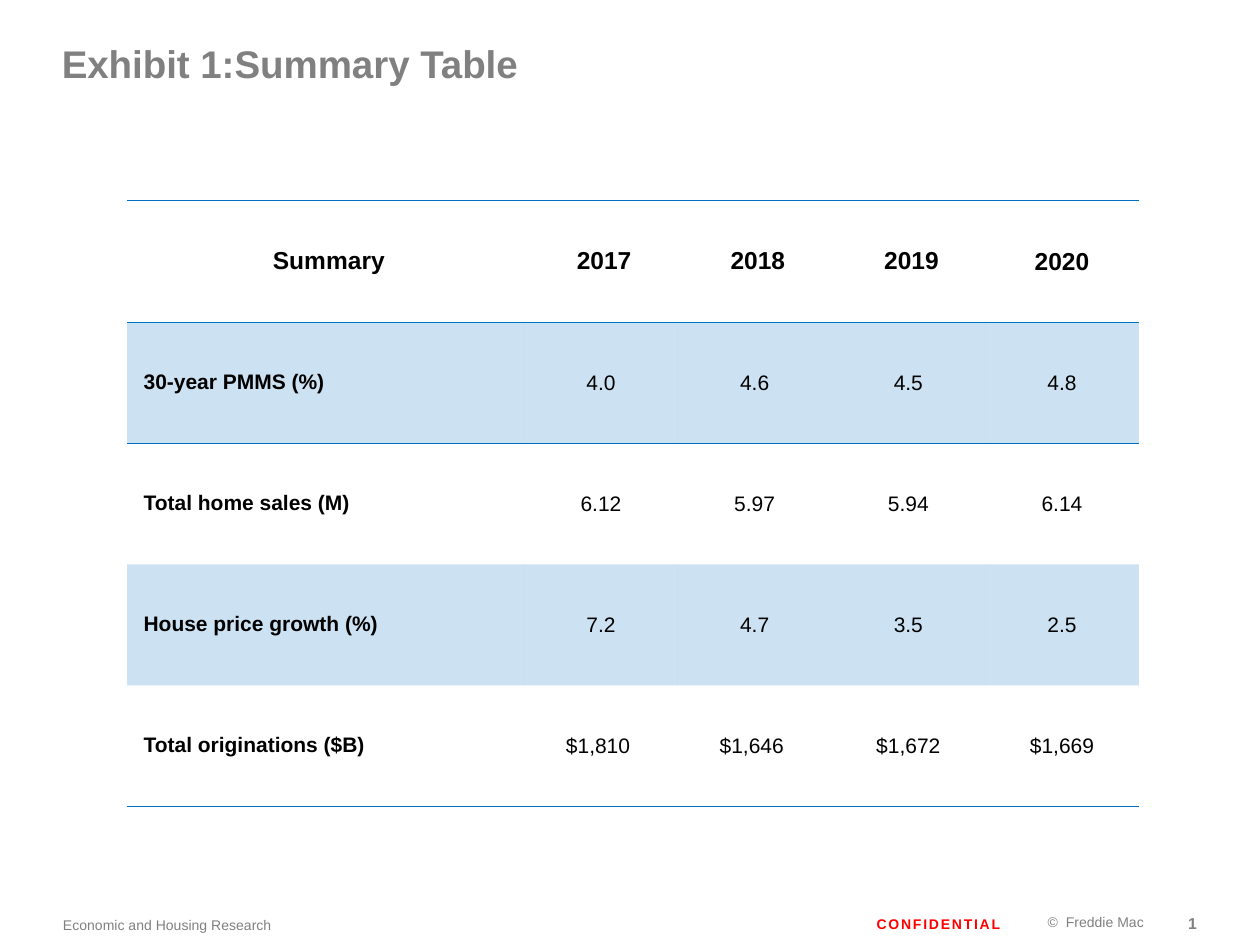
from dataclasses import dataclass

from lxml import etree
from pptx import Presentation
from pptx import util as u
from pptx.dml.color import RGBColor
from pptx.enum import text
from pptx.oxml import ns

GRAY = RGBColor(0x80, 0x80, 0x80)
RED = RGBColor(0xFF, 0x00, 0x00)
BLACK = RGBColor(0x00, 0x00, 0x00)
BLUE = RGBColor(0x00, 0x70, 0xC0)
FONT = "Arial"
PLAIN_TABLE_STYLE = "{2D5ABB26-0587-4C30-8999-92F81FD0307C}"
LEFT, CENTER, RIGHT = text.PP_ALIGN.LEFT, text.PP_ALIGN.CENTER, text.PP_ALIGN.RIGHT


@dataclass
class Style:
    size: float
    color: RGBColor
    bold: bool = False
    spacing: float = 0


@dataclass
class FooterItem:
    words: str
    left: float
    top: float
    width: float
    height: float
    align: text.PP_ALIGN
    style: Style


FOOTER = [
    FooterItem("©  Freddie Mac", 7.56, 7.16, 1.52, 0.32, RIGHT, Style(8, GRAY)),
    FooterItem("CONFIDENTIAL", 4.74, 7.18, 3.2, 0.31, RIGHT, Style(8, RED, True, 1)),
    FooterItem("Economic and Housing Research", 0.5, 7.18, 4.47, 0.32, LEFT, Style(8, GRAY)),
    FooterItem("1", 9.17, 7.17, 0.33, 0.31, RIGHT, Style(9, GRAY, True)),
]

ROWS = [
    ["Summary", "2017", "2018", "2019", "2020"],
    ["30-year PMMS (%)", "4.0", "4.6", "4.5", "4.8"],
    ["Total home sales (M)", "6.12", "5.97", "5.94", "6.14"],
    ["House price growth (%)", "7.2", "4.7", "3.5", "2.5"],
    ["Total originations ($B)", "$1,810 ", "$1,646 ", "$1,672", "$1,669"],
]
COLUMN_WIDTHS = [3.15] + [1.22] * 4
ROW_HEIGHTS = [0.97] + [0.96] * 4


def add_span(para, words: str, style: Style) -> None:
    span = para.add_run()
    span.text = words
    span.font.name = FONT
    span.font.size = u.Pt(style.size)
    span.font.bold = style.bold
    span.font.color.rgb = style.color
    if style.spacing:
        span.font._element.set("spc", str(int(style.spacing * 100)))


def set_margins(target, left: float, top: float, right: float, bottom: float) -> None:
    target.margin_left, target.margin_top = u.Inches(left), u.Inches(top)
    target.margin_right, target.margin_bottom = u.Inches(right), u.Inches(bottom)


def fill_frame(frame, words: str, align: text.PP_ALIGN, anchor: text.MSO_ANCHOR,
               style: Style) -> None:
    frame.word_wrap = True
    frame.auto_size = text.MSO_AUTO_SIZE.NONE
    frame.vertical_anchor = anchor
    set_margins(frame, 0, 0, 0, 0)
    para = frame.paragraphs[0]
    para.alignment = align
    add_span(para, words, style)


def add_footer_item(page, item: FooterItem) -> None:
    box = page.shapes.add_textbox(u.Inches(item.left), u.Inches(item.top),
                                  u.Inches(item.width), u.Inches(item.height))
    fill_frame(box.text_frame, item.words, item.align, text.MSO_ANCHOR.MIDDLE, item.style)


def set_title(page, words: str) -> None:
    title = page.shapes.title
    title.left, title.top = u.Inches(0.49), u.Inches(0.32)
    title.width, title.height = u.Inches(6.75), u.Inches(0.65)
    fill_frame(title.text_frame, words, LEFT, text.MSO_ANCHOR.TOP, Style(22, GRAY, True))


def add_solid(parent, color: RGBColor):
    fill = etree.SubElement(parent, ns.qn("a:solidFill"))
    return etree.SubElement(fill, ns.qn("a:srgbClr"), val=str(color))


def add_border(cell, tag: str) -> None:
    line = etree.SubElement(cell._tc.get_or_add_tcPr(), ns.qn(tag), w=str(u.Pt(1)))
    add_solid(line, BLUE)


def fill_cell(cell, words: str, row: int, column: int) -> None:
    header, label = row == 0, column == 0
    if row in (0, 1):
        add_border(cell, "a:lnT")
    if row in (0, len(ROWS) - 1):
        add_border(cell, "a:lnB")
    if row % 2:
        color = add_solid(cell._tc.get_or_add_tcPr(), BLUE)
        etree.SubElement(color, ns.qn("a:alpha"), val="20000")
    else:
        cell.fill.background()
    cell.vertical_anchor = text.MSO_ANCHOR.MIDDLE
    para = cell.text_frame.paragraphs[0]
    para.alignment = LEFT if label and not header else CENTER
    if label or (header and column < len(COLUMN_WIDTHS) - 1):
        set_margins(cell, 0.08, 0.02, 0.08, 0.06)
        para.line_spacing = 1.15
        properties = para._p.get_or_add_pPr()
        properties.set("marL", str(u.Inches(0.05)))
        properties.set("indent", "0")
    else:
        set_margins(cell, 0.01, 0.01, 0.01, 0)
    add_span(para, words, Style(14 if header else 12, BLACK, header or label))


def add_summary_table(page) -> None:
    frame = page.shapes.add_table(len(ROWS), len(COLUMN_WIDTHS), u.Inches(1.01), u.Inches(1.59),
                                  u.Inches(sum(COLUMN_WIDTHS)), u.Inches(sum(ROW_HEIGHTS)))
    table = frame.table
    table.first_row = table.horz_banding = False
    table._tbl.tblPr.find(ns.qn("a:tableStyleId")).text = PLAIN_TABLE_STYLE
    for column, width in zip(table.columns, COLUMN_WIDTHS):
        column.width = u.Inches(width)
    for row, height in zip(table.rows, ROW_HEIGHTS):
        row.height = u.Inches(height)
    for row, values in enumerate(ROWS):
        for column, words in enumerate(values):
            fill_cell(table.cell(row, column), words, row, column)


def main() -> None:
    deck = Presentation()
    deck.slide_width, deck.slide_height = u.Inches(10), u.Inches(7.5)
    page = deck.slides.add_slide(deck.slide_layouts[5])
    for item in FOOTER:
        add_footer_item(page, item)
    set_title(page, "Exhibit 1:Summary Table")
    add_summary_table(page)
    deck.save("out.pptx")


if __name__ == "__main__":
    main()
